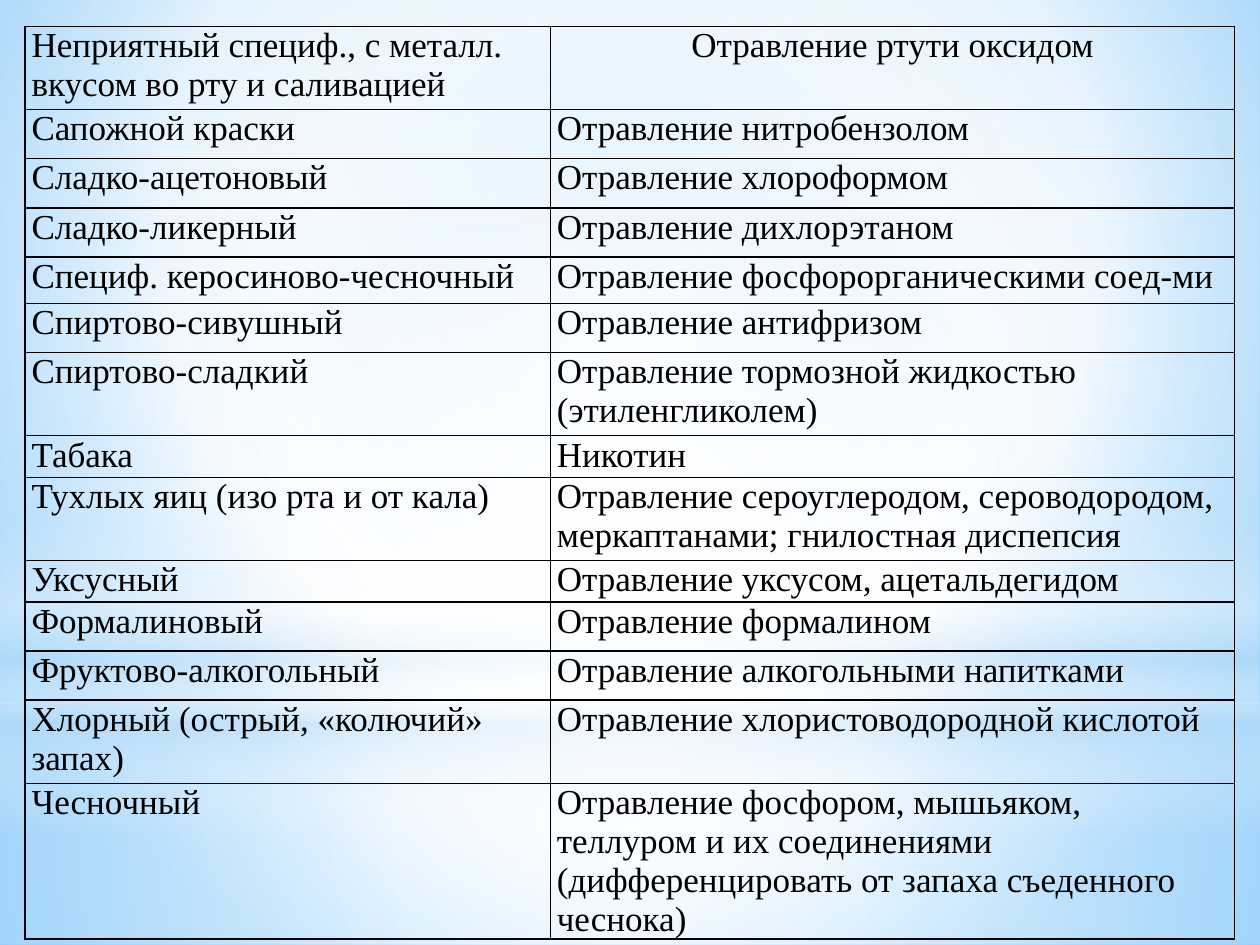
"""Builds a slide with a table of odours and the poisonings they point to."""
from pptx import Presentation
from pptx.dml.color import RGBColor
from pptx.enum.shapes import MSO_SHAPE
from pptx.enum.text import PP_ALIGN
from pptx.oxml import parse_xml
from pptx.oxml.ns import nsdecls
from pptx.util import Inches, Pt

BLACK, WHITE, PALE_BLUE = "000000", "FFFFFF", "B4DCFA"
CENTRE = (50, 50, 50, 50)
COLUMN_WIDTHS = (4.17, 5.43)
ROWS = [
    (0.66, "Неприятный специф., с металл. вкусом во рту и саливацией", "Отравление ртути оксидом"),
    (0.39, "Сапожной краски", "Отравление нитробензолом"),
    (0.39, "Сладко-ацетоновый", "Отравление хлороформом"),
    (0.39, "Сладко-ликерный", "Отравление дихлорэтаном"),
    (0.37, "Специф. керосиново-чесночный", "Отравление фосфорорганическими соед-ми"),
    (0.39, "Спиртово-сивушный", "Отравление антифризом"),
    (0.66, "Спиртово-сладкий", "Отравление тормозной жидкостью (этиленгликолем)"),
    (0.33, "Табака", "Никотин"),
    (0.66, "Тухлых яиц (изо рта и от кала)",
     "Отравление сероуглеродом, сероводородом, меркаптанами; гнилостная диспепсия"),
    (0.33, "Уксусный", "Отравление уксусом, ацетальдегидом"),
    (0.39, "Формалиновый", "Отравление формалином"),
    (0.39, "Фруктово-алкогольный", "Отравление алкогольными напитками"),
    (0.66, "Хлорный (острый, «колючий» запах)", "Отравление хлористоводородной кислотой"),
    (1, "Чесночный", "Отравление фосфором, мышьяком, теллуром и их соединениями "
     "(дифференцировать от запаха съеденного чеснока)"),
]


def colour(value):
    return RGBColor.from_string(value)


def write(frame, text, size=20, font="Times New Roman", shade=BLACK, align=PP_ALIGN.LEFT):
    para = frame.paragraphs[0]
    para.alignment = align
    span = para.add_run()
    span.text = text
    span.font.size, span.font.name = Pt(size), font
    span.font.color.rgb = colour(shade)


def gradient(stops, focus=None, angle=0):
    marks = "".join(
        f'<a:gs pos="{place * 1000}"><a:srgbClr val="{shade}">'
        f'<a:alpha val="{alpha * 1000}"/></a:srgbClr></a:gs>'
        for place, shade, alpha in stops)
    if focus:
        left, top, right, bottom = (side * 1000 for side in focus)
        course = (f'<a:path path="circle"><a:fillToRect l="{left}" t="{top}" '
                  f'r="{right}" b="{bottom}"/></a:path>')
    else:
        course = f'<a:lin ang="{angle * 60000}" scaled="0"/>'
    return parse_xml(f'<a:gradFill {nsdecls("a")} rotWithShape="1">'
                     f'<a:gsLst>{marks}</a:gsLst>{course}</a:gradFill>')


def replace_fill(owner, element, query, new_fill):
    owner.fill.solid()
    old_fill = element.xpath(query)[0]
    old_fill.getparent().replace(old_fill, new_fill)


class SlideBuilder:
    def __init__(self, deck, border=1, inset=0.05):
        self.page = deck.slides.add_slide(deck.slide_layouts[6])
        self.border, self.inset = border, inset

    def background(self, stops, focus):
        replace_fill(self.page.background, self.page._element,
                     "./p:cSld/p:bg/p:bgPr/a:solidFill", gradient(stops, focus))

    def glow(self, top, height, stops, focus=None, angle=0, kind=MSO_SHAPE.RECTANGLE):
        shape = self.page.shapes.add_shape(kind, 0, Inches(top), Inches(10), Inches(height))
        shape.shadow.inherit = False
        shape.line.fill.background()
        replace_fill(shape, shape._element, "./p:spPr/a:solidFill",
                     gradient(stops, focus, angle))

    def cell(self, cell, text, align):
        cell.margin_left = cell.margin_right = Inches(self.inset)
        cell.margin_top = cell.margin_bottom = 0
        write(cell.text_frame, text, align=align)
        properties = cell._tc.get_or_add_tcPr()
        for side in ("lnL", "lnR", "lnT", "lnB"):
            properties.append(parse_xml(
                f'<a:{side} {nsdecls("a")} w="{Pt(self.border)}"><a:solidFill>'
                f'<a:srgbClr val="{BLACK}"/></a:solidFill></a:{side}>'))
        cell.fill.background()

    def table(self, left, top, widths, rows):
        height = sum(row[0] for row in rows)
        table = self.page.shapes.add_table(
            len(rows), len(widths), Inches(left), Inches(top),
            Inches(sum(widths)), Inches(height)).table
        table.first_row = table.horz_banding = False
        for column, width in zip(table.columns, widths):
            column.width = Inches(width)
        for row_index, (row_height, *texts) in enumerate(rows):
            table.rows[row_index].height = Inches(row_height)
            for column_index, text in enumerate(texts):
                centred = (row_index, column_index) == (0, 1)
                self.cell(table.cell(row_index, column_index), text,
                          PP_ALIGN.CENTER if centred else PP_ALIGN.LEFT)


def main():
    deck = Presentation()
    deck.slide_width, deck.slide_height = Inches(10), Inches(7.5)
    slide = SlideBuilder(deck)
    slide.background([(0, "9ED5FF", 100), (60, WHITE, 100), (100, "5BB9FF", 100)],
                     (20, 10, 20, 60))
    slide.glow(5.58, 1.92, [(0, WHITE, 91), (37, WHITE, 76), (100, PALE_BLUE, 79)], CENTRE)
    slide.glow(0, 5.58, [(0, WHITE, 89), (48, WHITE, 62), (100, PALE_BLUE, 79)], CENTRE)
    slide.glow(4.12, 2.5, [(0, WHITE, 0), (29, WHITE, 30), (45, PALE_BLUE, 40),
                           (55, WHITE, 26), (65, PALE_BLUE, 60), (100, WHITE, 0)], angle=90)
    slide.glow(1.75, 5.58, [(0, WHITE, 100), (56, WHITE, 0)], CENTRE, kind=MSO_SHAPE.OVAL)
    slide.table(0.2, 0.21, COLUMN_WIDTHS, ROWS)
    deck.save("out.pptx")


if __name__ == "__main__":
    main()
